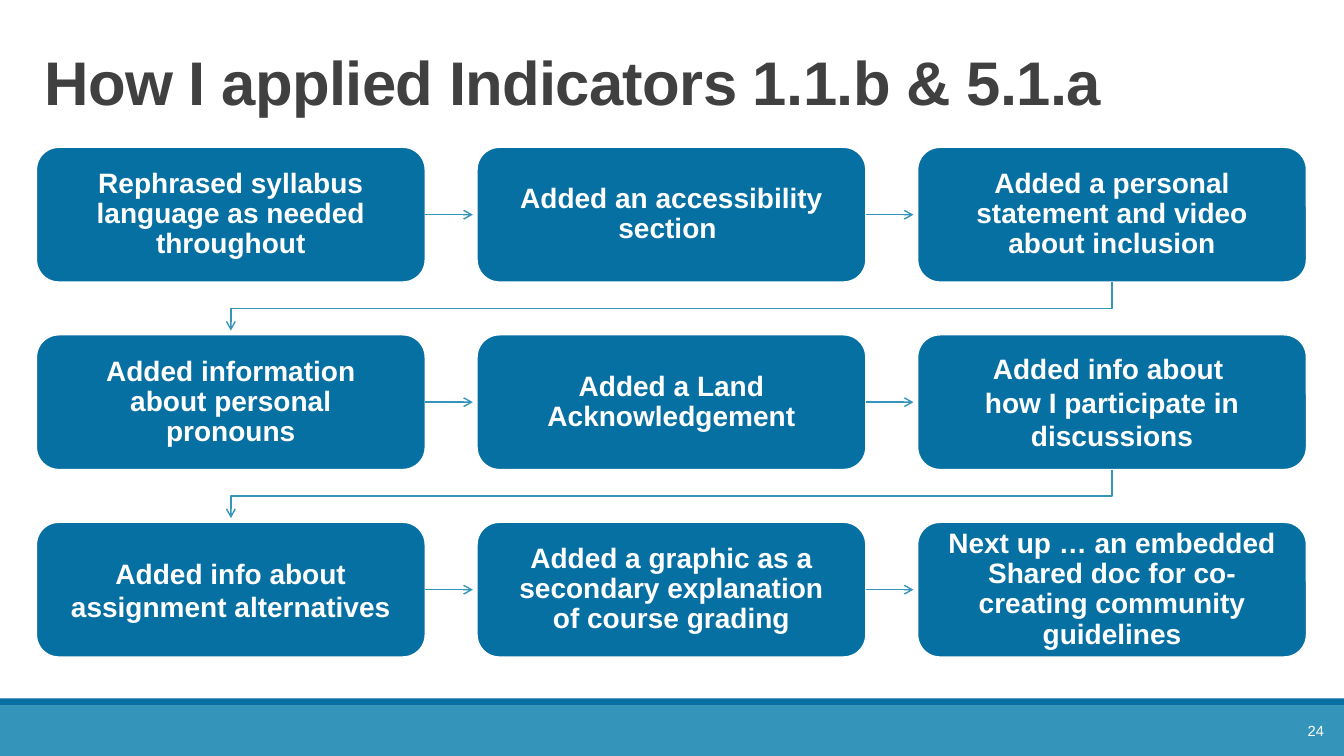
from pptx import Presentation
from pptx.dml.color import RGBColor
from pptx.enum.shapes import MSO_CONNECTOR as Connector, MSO_SHAPE as Shape
from pptx.enum.text import MSO_ANCHOR as Anchor, MSO_AUTO_SIZE as AutoSize, PP_ALIGN as Align
from pptx.oxml.ns import qn
from pptx.util import Inches, Pt
from lxml.etree import SubElement

TITLE = "How I applied Indicators 1.1.b & 5.1.a"
PAGE_NUMBER = "24"
TIGHT, SINGLE = 0.9, 1.0
STEPS = [
    [("Rephrased syllabus language as needed throughout", TIGHT),
     ("Added an accessibility section ", TIGHT),
     ("Added a personal statement and video about inclusion", TIGHT)],
    [("Added information about personal pronouns", TIGHT),
     ("Added a Land Acknowledgement", TIGHT),
     ("Added info about \nhow I participate in discussions", SINGLE)],
    [("Added info about assignment alternatives", SINGLE),
     ("Added a graphic as a secondary explanation of course grading", TIGHT),
     ("Next up … an embedded Shared doc for co-creating community guidelines", TIGHT)],
]
BARS = [((0, 7, 13.33, 0.5), "3494BA"), ((0, 6.93, 13.33, 0.07), "0770A3")]
BLUE, TEAL, WHITE, GRAY = "0770A3", "3494BA", "FFFFFF", "404040"
LEFT, TOP = 0.36, 1.46
BOX_WIDTH, BOX_HEIGHT = 3.86, 1.34
COLUMN_PITCH, ROW_PITCH = 4.37, 1.86
ARROW_GAP, TURN_DROP = 0.04, 0.26


def color(value):
    return RGBColor.from_string(value)


def write(shape, text, size, fill, bold, align, line_spacing=1.0, inset=(0.1, 0.05)):
    frame = shape.text_frame
    horizontal, vertical = (Inches(value) for value in inset)
    frame_format = {
        "word_wrap": True, "auto_size": AutoSize.NONE, "vertical_anchor": Anchor.MIDDLE,
        "margin_left": horizontal, "margin_right": horizontal,
        "margin_top": vertical, "margin_bottom": vertical,
    }
    for name, value in frame_format.items():
        setattr(frame, name, value)
    paragraph = frame.paragraphs[0]
    paragraph.text = text.replace("\n", "\v")
    paragraph.alignment = align
    paragraph.line_spacing = line_spacing
    for run in paragraph.runs:
        for name, value in {"name": "Arial", "size": Pt(size), "bold": bold}.items():
            setattr(run.font, name, value)
        run.font.color.rgb = color(fill)
    return paragraph


def add_block(slide, kind, place, fill):
    shape = slide.shapes.add_shape(kind, *map(Inches, place))
    shape.shadow.inherit = False
    shape.fill.solid()
    shape.fill.fore_color.rgb = color(fill)
    shape.line.fill.background()
    return shape


def style_arrow(arrow):
    arrow.line.color.rgb = color(TEAL)
    arrow.line.width = Pt(1)
    SubElement(arrow.line._get_or_add_ln(), qn("a:tailEnd"), type="arrow")


def add_step(slide, left, top, text, line_spacing):
    box = add_block(slide, Shape.ROUNDED_RECTANGLE, (left, top, BOX_WIDTH, BOX_HEIGHT), BLUE)
    box.line.color.rgb = color(WHITE)
    box.line.width = Pt(1.25)
    write(box, text, 20, WHITE, True, Align.CENTER, line_spacing, (0.22, 0.22))
    return box


def add_side_arrow(slide, box, next_left, middle):
    arrow = slide.shapes.add_connector(
        Connector.STRAIGHT, box.left + box.width, Inches(middle),
        Inches(next_left - ARROW_GAP), Inches(middle))
    arrow.begin_connect(box, 3)
    SubElement(arrow._element.spPr, qn("a:effectLst"))
    style_arrow(arrow)


def add_return_arrow(slide, bottom, next_top):
    first_center = LEFT + BOX_WIDTH / 2
    last_center = first_center + 2 * COLUMN_PITCH
    turn = bottom + TURN_DROP
    corners = [(last_center, turn), (first_center, turn), (first_center, next_top - ARROW_GAP)]
    builder = slide.shapes.build_freeform(Inches(last_center), Inches(bottom))
    builder.add_line_segments([(Inches(x), Inches(y)) for x, y in corners], close=False)
    arrow = builder.convert_to_shape()
    arrow.fill.background()
    arrow.shadow.inherit = False
    style_arrow(arrow)


def main():
    presentation = Presentation()
    presentation.slide_width, presentation.slide_height = Inches(13.33), Inches(7.5)
    slide = presentation.slides.add_slide(presentation.slide_layouts[5])

    title = slide.shapes.title
    title_place = {"left": 0.34, "top": 0.31, "width": 12.62, "height": 1.11}
    for name, value in title_place.items():
        setattr(title, name, Inches(value))
    heading = write(title, TITLE, 44, GRAY, True, Align.LEFT, 0.85)
    heading.runs[0].font._element.set("spc", "-50")

    for place, fill in BARS:
        add_block(slide, Shape.RECTANGLE, place, fill)

    for row, steps in enumerate(STEPS):
        top = TOP + row * ROW_PITCH
        for column, (text, line_spacing) in enumerate(steps):
            left = LEFT + column * COLUMN_PITCH
            box = add_step(slide, left, top, text, line_spacing)
            if column < len(steps) - 1:
                add_side_arrow(slide, box, left + COLUMN_PITCH, top + BOX_HEIGHT / 2)
        if row < len(STEPS) - 1:
            add_return_arrow(slide, top + BOX_HEIGHT, top + ROW_PITCH)

    number = slide.shapes.add_textbox(*map(Inches, (11.8, 7.05, 1.43, 0.4)))
    write(number, PAGE_NUMBER, 10.5, WHITE, False, Align.RIGHT)
    presentation.save("out.pptx")


if __name__ == "__main__":
    main()
